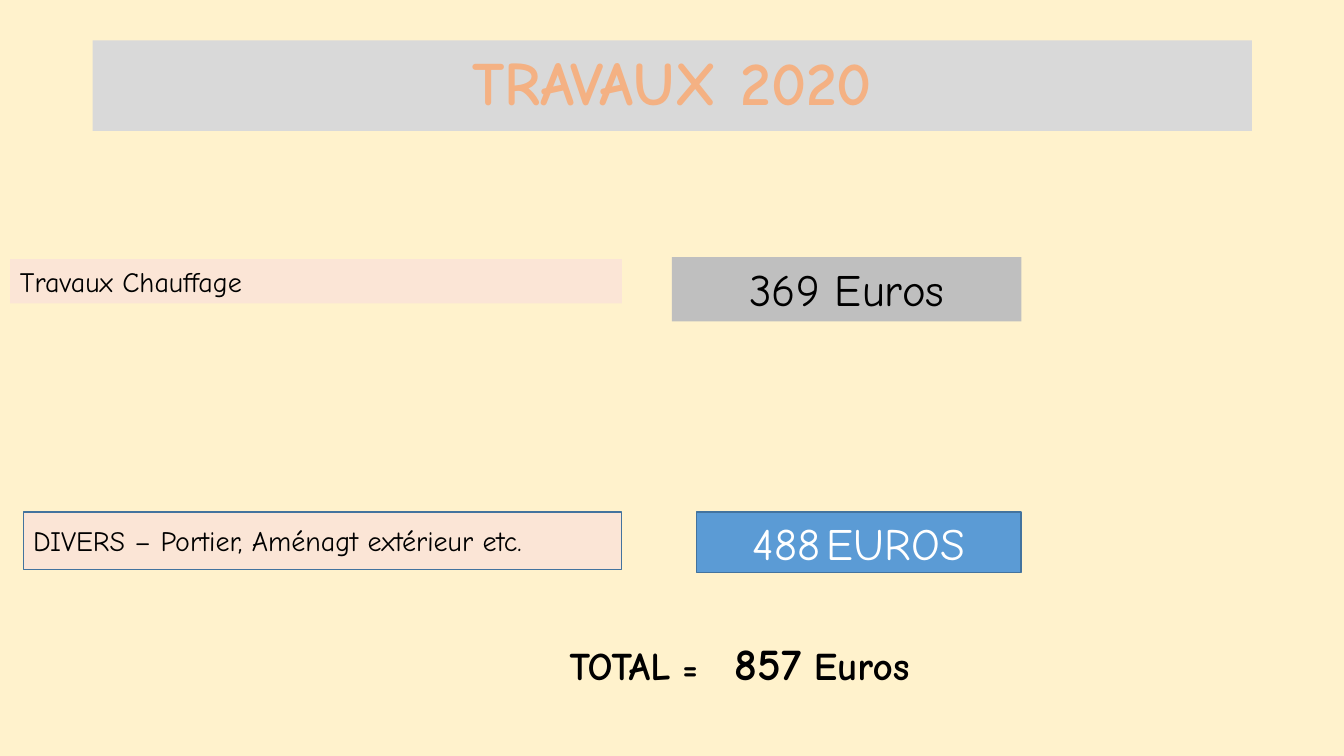
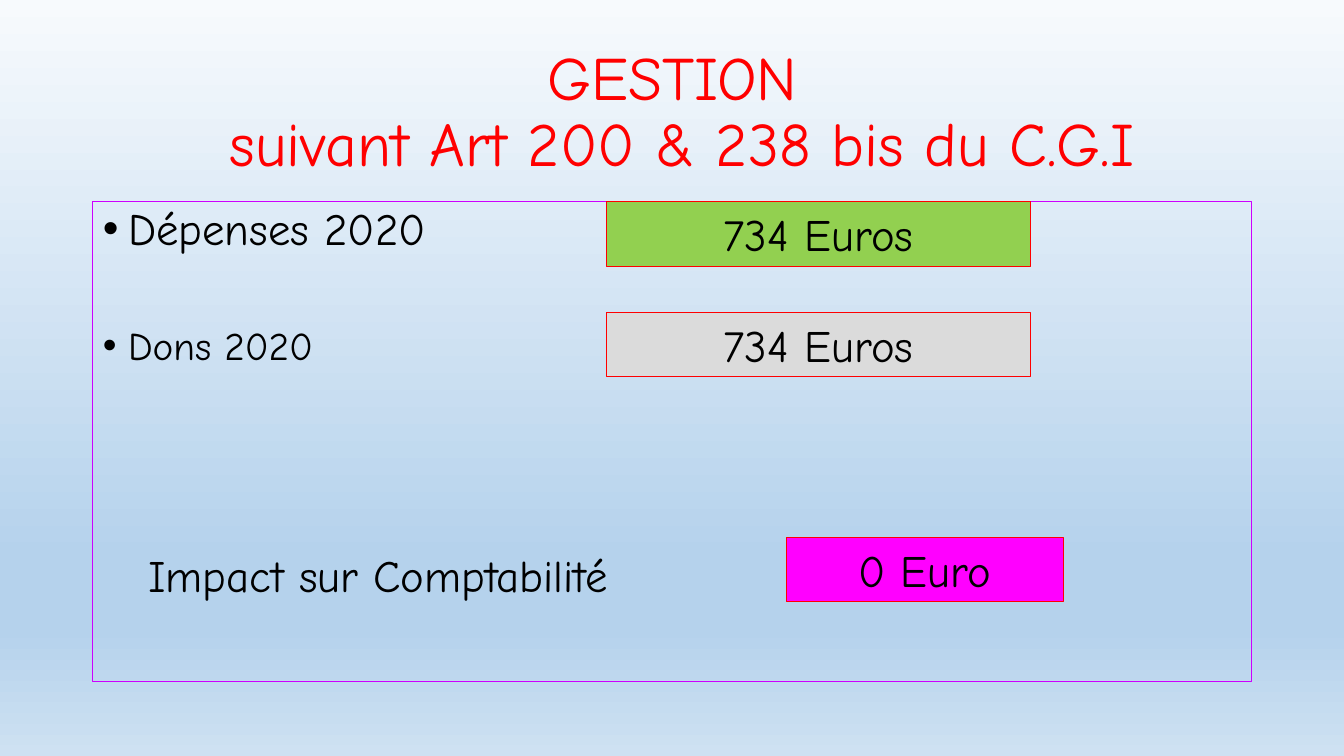
from dataclasses import dataclass

from lxml import etree
from pptx import Presentation
from pptx.dml.color import RGBColor
from pptx.enum.shapes import MSO_SHAPE
from pptx.enum.text import MSO_ANCHOR, MSO_AUTO_SIZE, PP_ALIGN
from pptx.oxml.ns import qn
from pptx.util import Inches, Pt

RECTANGLE = MSO_SHAPE.RECTANGLE
TOP, MIDDLE = MSO_ANCHOR.TOP, MSO_ANCHOR.MIDDLE
NO_FIT = MSO_AUTO_SIZE.NONE
LEFT, CENTER = PP_ALIGN.LEFT, PP_ALIGN.CENTER
LAYOUT_CONTENT, LAYOUT_TITLE_ONLY = 1, 5


@dataclass(frozen=True)
class Theme:
    font: str = "Comic Neue"
    spacer_font: str = "Calibri"
    # Type sizes
    title: int = 44
    amount: int = 32
    item: int = 28
    sign: int = 24
    label: int = 20
    spacer: int = 18
    # Colours
    ink: str = "000000"
    white: str = "FFFFFF"
    cream: str = "FFF2CC"
    peach: str = "FBE5D6"
    orange: str = "F4B183"
    band: str = "D9D9D9"
    gray: str = "BFBFBF"
    light_gray: str = "DBDBDB"
    blue: str = "5B9BD5"
    blue_edge: str = "43739E"
    red: str = "FF0000"
    green: str = "92D050"
    magenta: str = "FF00FF"
    violet: str = "CC00FF"
    sky: tuple = ((0, "F7FAFD"), (74, "B5D2EC"), (83, "B5D2EC"), (100, "CEE1F2"))


THEME = Theme()


@dataclass(frozen=True)
class Box:
    """A region in inches; areas are given in percent of it."""
    x: float
    y: float
    w: float
    h: float

    def area(self, x, y, w, h):
        return Box(self.x + self.w * x / 100, self.y + self.h * y / 100,
                   self.w * w / 100, self.h * h / 100)

    def emu(self):
        return [Inches(side) for side in (self.x, self.y, self.w, self.h)]


PAGE = Box(0, 0, 13.33, 7.5)
TITLE_X, TITLE_Y, TITLE_W = 6.9, 5.33, 86.25


def style_font(font, size=None, color=THEME.ink, bold=None):
    font.name = THEME.font
    font.bold = bold
    font.color.rgb = RGBColor.from_string(color)
    if size:
        font.size = Pt(size)


def style_fill(shape, fill=None, edge=None, edge_width=1):
    if fill:
        shape.fill.solid()
        shape.fill.fore_color.rgb = RGBColor.from_string(fill)
    if edge:
        shape.line.color.rgb = RGBColor.from_string(edge)
        shape.line.width = Pt(edge_width)
    else:
        shape.line.fill.background()


def add_sized_runs(paragraph, sized_texts):
    for text, size in sized_texts:
        run = paragraph.add_run()
        run.text = text
        run.font.size = Pt(size)


def place(placeholder, box):
    (placeholder.left, placeholder.top,
     placeholder.width, placeholder.height) = box.emu()
    placeholder.text_frame.auto_size = NO_FIT


def set_title(slide, box, text, color, bold=False, fill=None):
    title = slide.shapes.title
    place(title, box)
    style_fill(title, fill)
    frame = title.text_frame
    frame.vertical_anchor = MIDDLE
    frame.text = text
    heading = frame.paragraphs[0]
    heading.alignment = CENTER
    heading.line_spacing = 0.9
    style_font(heading.font, THEME.title, color, bold)


def add_panel(slide, box, text, fill, size=THEME.amount, align=CENTER,
              anchor=TOP, edge=None, edge_width=1, color=THEME.ink):
    """Rectangle with one line, given as a string or as (text, size) runs."""
    panel = slide.shapes.add_shape(RECTANGLE, *box.emu())
    panel.shadow.inherit = False
    style_fill(panel, fill, edge, edge_width)
    frame = panel.text_frame
    frame.word_wrap = True
    frame.vertical_anchor = anchor
    line = frame.paragraphs[0]
    line.alignment = align
    if isinstance(text, str):
        line.text = text
        style_font(line.font, size, color)
    else:
        style_font(line.font, color=color)
        add_sized_runs(line, text)
    return line


def add_total(slide, box):
    frame = slide.shapes.add_textbox(*box.emu()).text_frame
    frame.word_wrap = True
    frame.margin_left = Inches(0.78)
    total = frame.paragraphs[0]
    # The amount starts at a tab stop
    stops = etree.SubElement(total._p.get_or_add_pPr(), qn("a:tabLst"))
    etree.SubElement(stops, qn("a:tab"), pos=str(Inches(1.64)), algn="l")
    style_font(total.font, bold=True)
    add_sized_runs(total, (("TOTAL", THEME.item), (" =\t", THEME.sign),
                           ("857", THEME.amount), (" ", THEME.sign),
                           ("Euros", THEME.item)))


def add_budget_list(slide, box):
    body = slide.placeholders[1]
    place(body, box)
    style_fill(body, edge=THEME.violet, edge_width=0.75)
    frame = body.text_frame
    frame.vertical_anchor = TOP
    # Text, size, space before, bulleted
    entries = (("Dépenses 2020", THEME.amount, 10, True),
               ("Dons 2020", THEME.item, 51, True),
               ("Impact sur Comptabilité", THEME.amount, 132, False))
    for index, (text, size, gap, bulleted) in enumerate(entries):
        entry = frame.paragraphs[0] if index == 0 else frame.add_paragraph()
        entry.text = text
        props = entry._p.get_or_add_pPr()
        props.set("marL", str(Inches(0.25 if bulleted else 0.45)))
        props.set("indent", str(Inches(-0.25 if bulleted else 0)))
        if bulleted:
            etree.SubElement(props, qn("a:buFont"), typeface="Arial")
            etree.SubElement(props, qn("a:buChar"), char="•")
        else:
            etree.SubElement(props, qn("a:buNone"))
        entry.line_spacing = 0.9
        entry.space_before = Pt(gap)
        style_font(entry.font, size)


def set_sky_background(slide):
    fill = slide.background.fill
    fill.gradient()
    fill.gradient_angle = 270
    stops = slide.element.find(".//" + qn("a:gsLst"))
    for stop in list(stops):
        stops.remove(stop)
    for percent, color in THEME.sky:
        stop = etree.SubElement(stops, qn("a:gs"), pos=str(percent * 1000))
        etree.SubElement(stop, qn("a:srgbClr"), val=color)


def build_works_slide(deck, page):
    slide = deck.slides.add_slide(deck.slide_layouts[LAYOUT_TITLE_ONLY])
    slide.background.fill.solid()
    slide.background.fill.fore_color.rgb = RGBColor.from_string(THEME.cream)
    set_title(slide, page.area(TITLE_X, TITLE_Y, TITLE_W, 12), "TRAVAUX 2020",
              THEME.orange, bold=True, fill=THEME.band)
    # Heating
    add_panel(slide, page.area(0.75, 34.27, 45.53, 5.87), "Travaux Chauffage",
              THEME.peach, THEME.label, LEFT)
    add_panel(slide, page.area(50, 34, 26, 8.53), "369 Euros", THEME.gray)
    add_total(slide, page.area(36.53, 83.47, 36.9, 8.53))
    # Miscellaneous
    add_panel(slide, page.area(1.73, 67.73, 44.5, 7.6),
              "DIVERS – Portier, Aménagt extérieur etc.", THEME.peach,
              THEME.label, LEFT, MIDDLE, THEME.blue_edge)
    misc = add_panel(slide, page.area(51.83, 67.73, 24.15, 8),
                     (("488", THEME.amount), (" ", THEME.spacer),
                      ("EUROS", THEME.amount)),
                     THEME.blue, anchor=MIDDLE, edge=THEME.blue_edge,
                     color=THEME.white)
    misc.runs[1].font.name = THEME.spacer_font


def build_management_slide(deck, page):
    slide = deck.slides.add_slide(deck.slide_layouts[LAYOUT_CONTENT])
    set_sky_background(slide)
    set_title(slide, page.area(TITLE_X, TITLE_Y, TITLE_W, 19.33),
              "GESTION\v suivant Art 200 & 238 bis du C.G.I", THEME.red)
    budget = page.area(TITLE_X, 26.67, TITLE_W, 63.47)
    add_budget_list(slide, budget)
    # Amounts beside the list: text, fill, left, top, width
    amounts = (("734 Euros", THEME.green, 44.35, 0, 36.52),
               ("0 Euro", THEME.magenta, 59.83, 69.96, 23.91),
               ("734 Euros", THEME.light_gray, 44.35, 23.11, 36.52))
    for text, fill, left, top, width in amounts:
        add_panel(slide, budget.area(left, top, width, 13.45), text, fill,
                  edge=THEME.red, edge_width=0.75)


def main():
    deck = Presentation()
    deck.slide_width, deck.slide_height = Inches(PAGE.w), Inches(PAGE.h)
    build_works_slide(deck, PAGE)
    build_management_slide(deck, PAGE)
    deck.save("out.pptx")


if __name__ == "__main__":
    main()
